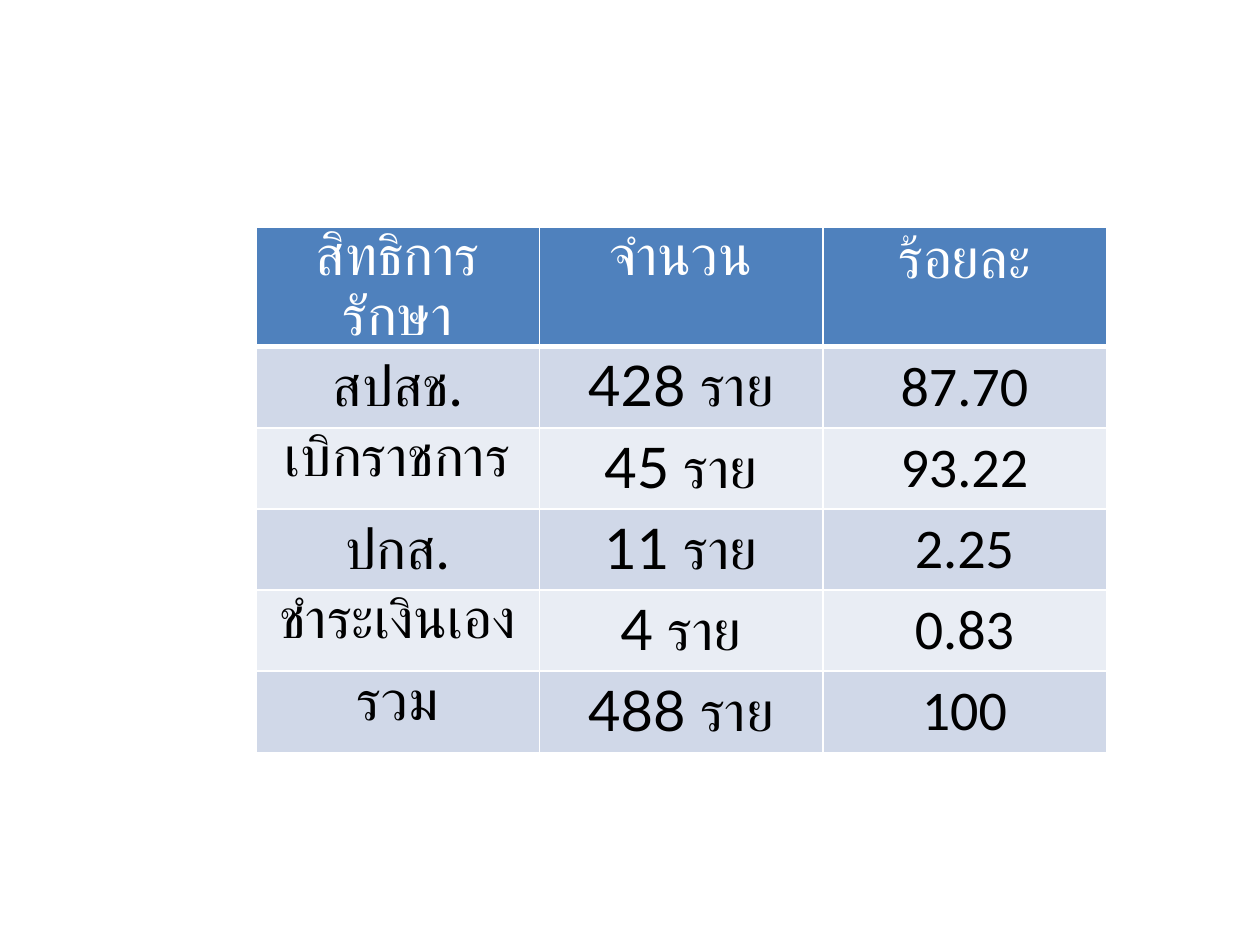
from lxml.etree import SubElement
from pptx import Presentation
from pptx.dml.color import RGBColor
from pptx.enum.text import PP_ALIGN
from pptx.oxml.ns import qn
from pptx.util import Inches, Pt

WHITE, BLACK, HEADER_BLUE = "FFFFFF", "000000", "4F81BD"
BANDS = ("D0D8E8", "E9EDF4")
BODY_FONT, COUNT_FONT = "Calibri", "Lato"
COLUMN_WIDTH, HEADER_HEIGHT, ROW_HEIGHT = 2.25, 0.95, 0.64

HEADER = ("สิทธิการรักษา", "จำนวน", "ร้อยละ")
RIGHTS = (
    ("สปสช.", "428 ราย", "87.70"),
    ("เบิกราชการ", "45 ราย", "93.22"),
    ("ปกส.", "11 ราย", "2.25"),
    ("ชำระเงินเอง", "4 ราย", "0.83"),
    ("รวม", "488 ราย", "100"),
)


def color(value):
    return RGBColor.from_string(value)


def add_run(para, text, font, text_color):
    span = para.add_run()
    span.text = text
    span.font.name = font
    span.font.size = Pt(32)
    span.font.bold = False
    span.font.color.rgb = color(text_color)


def set_borders(cell, top, bottom):
    """Draw white borders; top and bottom widths are in points."""
    properties = cell._tc.get_or_add_tcPr()
    for side, width in (("L", 1), ("R", 1), ("T", top), ("B", bottom)):
        line = SubElement(properties, qn(f"a:ln{side}"), w=str(Pt(width)))
        fill = SubElement(line, qn("a:solidFill"))
        SubElement(fill, qn("a:srgbClr"), val=WHITE)


def fill_cell(cell, runs, fill_color, text_color, compact):
    """Fill and write a cell; compact removes its vertical margins."""
    cell.fill.solid()
    cell.fill.fore_color.rgb = color(fill_color)
    para = cell.text_frame.paragraphs[0]
    para.alignment = PP_ALIGN.CENTER
    if compact:
        cell.margin_left = cell.margin_right = Inches(0.07)
        cell.margin_top = cell.margin_bottom = 0
        para.line_spacing = 1.07
    for text, font in runs:
        add_run(para, text, font, text_color)


def split_runs(text, column):
    """Counts and the full stop of an abbreviation use the second font."""
    if column == 1:
        return [(text, COUNT_FONT)]
    if text.endswith("."):
        return [(text[:-1], BODY_FONT), (".", COUNT_FONT)]
    return [(text, BODY_FONT)]


def add_rights_table(slide):
    frame = slide.shapes.add_table(
        len(RIGHTS) + 1, len(HEADER), Inches(2.03), Inches(1.8),
        Inches(COLUMN_WIDTH * len(HEADER)),
        Inches(HEADER_HEIGHT + ROW_HEIGHT * len(RIGHTS)))
    table = frame.table
    for column in table.columns:
        column.width = Inches(COLUMN_WIDTH)
    for index, row in enumerate(table.rows):
        row.height = Inches(ROW_HEIGHT if index else HEADER_HEIGHT)

    for column, text in enumerate(HEADER):
        cell = table.cell(0, column)
        set_borders(cell, top=1, bottom=3)
        fill_cell(cell, [(text, BODY_FONT)], HEADER_BLUE, WHITE, column < 2)
    for row, values in enumerate(RIGHTS, start=1):
        for column, text in enumerate(values):
            cell = table.cell(row, column)
            set_borders(cell, top=3 if row == 1 else 1, bottom=1)
            fill_cell(cell, split_runs(text, column),
                      BANDS[(row - 1) % 2], BLACK, column < 2)


def main():
    deck = Presentation()
    deck.slide_width, deck.slide_height = Inches(10), Inches(7.5)
    slide = deck.slides.add_slide(deck.slide_layouts[6])
    add_rights_table(slide)
    deck.save("out.pptx")


if __name__ == "__main__":
    main()
